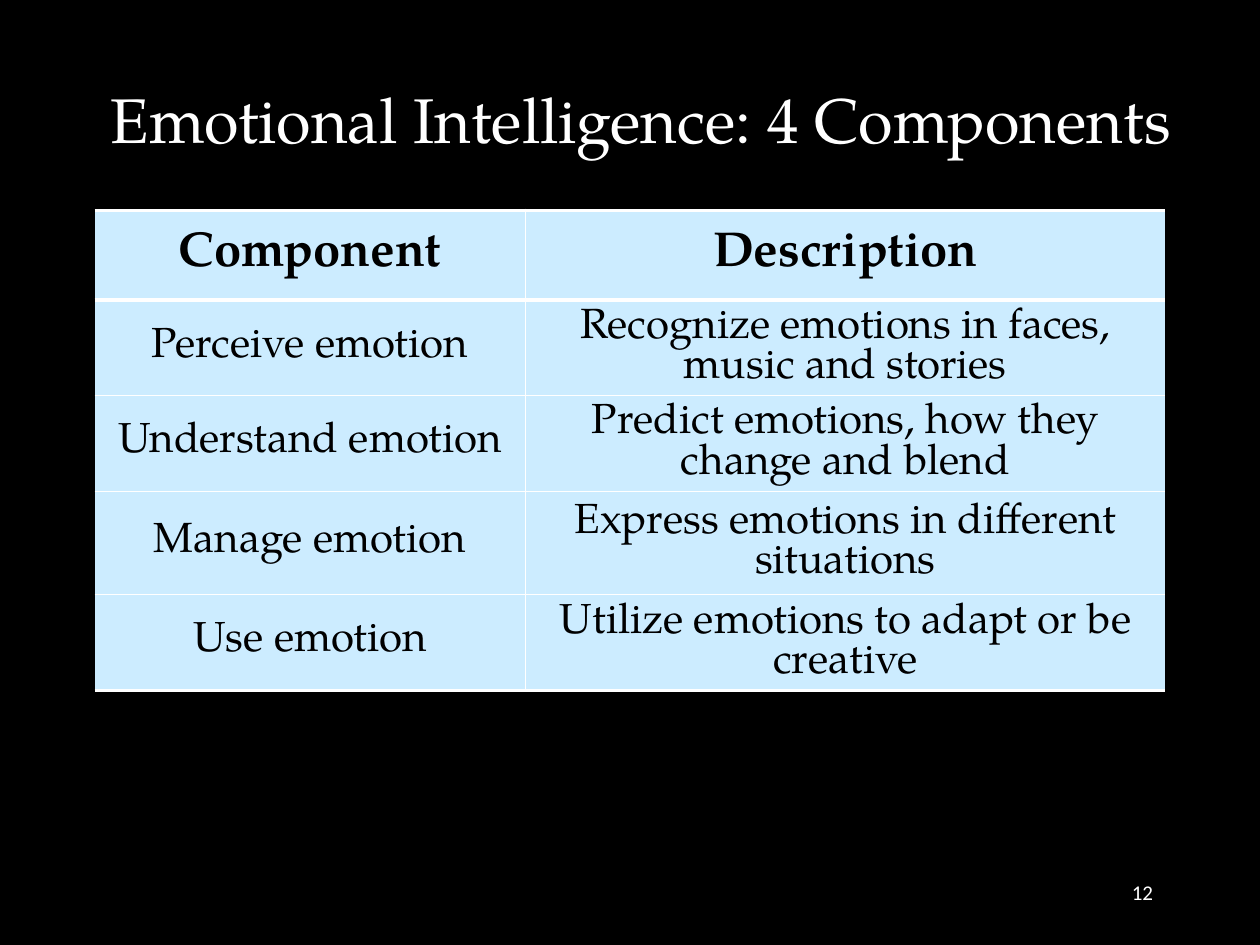
from lxml import etree
from pptx import Presentation
from pptx import util as u
from pptx.dml.color import RGBColor
from pptx.enum import text
from pptx.oxml import ns

BLACK = RGBColor(0, 0, 0)
WHITE = RGBColor(255, 255, 255)
PALE_BLUE = RGBColor(0xCC, 0xEC, 0xFF)
SERIF = "TeX Gyre Pagella"
CENTER, RIGHT = text.PP_ALIGN.CENTER, text.PP_ALIGN.RIGHT


def write(para, words, align, **font):
    para.alignment = align
    span = para.add_run()
    span.text = words
    span.font.color.rgb = font.pop("color")
    for name, value in font.items():
        setattr(span.font, name, value)


def draw_border(cell, side, points):
    line = etree.SubElement(cell._tc.get_or_add_tcPr(), ns.qn(f"a:ln{side}"), w=str(u.Pt(points)))
    fill = etree.SubElement(line, ns.qn("a:solidFill"))
    etree.SubElement(fill, ns.qn("a:srgbClr"), val=str(WHITE))


deck = Presentation()
deck.slide_width, deck.slide_height = u.Inches(10), u.Inches(7.5)
page = deck.slides.add_slide(deck.slide_layouts[6])
page.background.fill.solid()
page.background.fill.fore_color.rgb = BLACK

labels = [
    ((0.73, 0.31, 8.71, 1.25), "Emotional Intelligence: 4 Components", CENTER, SERIF, 36),
    ((7.17, 6.83, 2.08, 0.5), "12", RIGHT, "Calibri", 12),
]
for place, words, align, face, size in labels:
    box = page.shapes.add_textbox(*map(u.Inches, place))
    box.text_frame.word_wrap = True
    box.text_frame.vertical_anchor = text.MSO_ANCHOR.MIDDLE
    write(box.text_frame.paragraphs[0], words, align, name=face, size=u.Pt(size), color=WHITE)

rows = [
    (0.71, "Component", "Description"),
    (0.58, "Perceive emotion", "Recognize emotions in faces, music and stories"),
    (0.62, "Understand emotion", "Predict emotions, how they change and blend"),
    (0.82, "Manage emotion", "Express emotions in different situations"),
    (0.59, "Use emotion", "Utilize emotions to adapt or be creative"),
]
column_widths = [3.42, 5.08]
rules = [2.25, 2.25, 1, 1, 1, 2.25]

frame = page.shapes.add_table(
    len(rows), len(column_widths), u.Inches(0.75), u.Inches(1.67), u.Inches(8.5), u.Inches(4.15))
table = frame.table
table.first_row = table.horz_banding = False
style = table._tbl.tblPr.find(ns.qn("a:tableStyleId"))
style.text = "{2D5ABB26-0587-4C30-8999-92F81FD0307C}"
for column, width in zip(table.columns, column_widths):
    column.width = u.Inches(width)

for r, (height, *entries) in enumerate(rows):
    table.rows[r].height = u.Inches(height)
    header = r == 0
    for c, words in enumerate(entries):
        cell = table.cell(r, c)
        for side, points in (("R" if c == 0 else "L", 1), ("T", rules[r]), ("B", rules[r + 1])):
            draw_border(cell, side, points)
        cell.fill.solid()
        cell.fill.fore_color.rgb = PALE_BLUE
        cell.vertical_anchor = text.MSO_ANCHOR.MIDDLE
        cell.margin_top = cell.margin_bottom = u.Inches(0)
        para = cell.text_frame.paragraphs[0]
        write(para, words, CENTER, name=SERIF, size=u.Pt(28 if header else 24),
              bold=header, color=BLACK)
        if c == 1 and not header:
            para.line_spacing = 0.95
        before = etree.SubElement(para._p.get_or_add_pPr(), ns.qn("a:spcBef"))
        etree.SubElement(before, ns.qn("a:spcPct"), val="20000")
frame.height = u.Inches(4.15)

deck.save("out.pptx")
